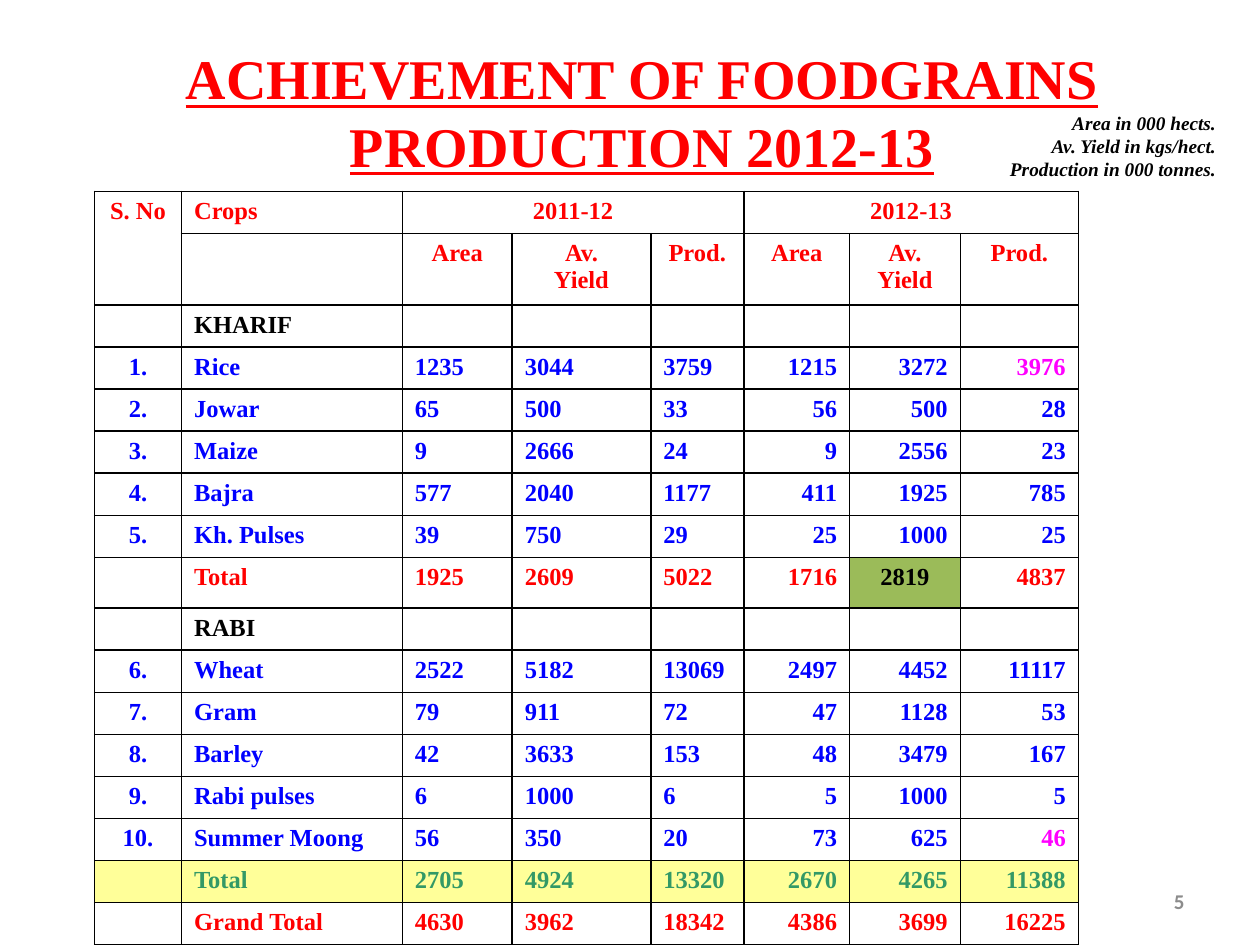
"""Build a slide with a table of foodgrain area, yield and production for two years."""
from lxml.etree import SubElement
from pptx import Presentation
from pptx.dml.color import RGBColor
from pptx.enum.shapes import MSO_SHAPE
from pptx.enum.text import MSO_ANCHOR, PP_ALIGN
from pptx.oxml.ns import qn
from pptx.util import Pt

THEME = {
    "red": "FF0000", "blue": "0000FF", "black": "000000", "magenta": "FF00FF",
    "teal": "339966", "grey": "8C8C8C", "white": "FFFFFF", "yellow": "FFFF99", "green": "9BBB59",
    "title": 32, "body": 14, "number": 12, "note": 11,
    "serif": "Times New Roman", "sans": "Calibri",
}


def write(frame, text, color, size, align, face="serif", **styles):
    """Fill a text frame and format all of its runs."""
    frame.text = text
    formats = {"name": THEME[face], "size": Pt(THEME[size]), "bold": True, **styles}
    for paragraph in frame.paragraphs:
        paragraph.alignment = align
        for run in paragraph.runs:
            run.font.color.rgb = RGBColor.from_string(THEME[color])
            for name, value in formats.items():
                setattr(run.font, name, value)


def draw_borders(cell):
    """Put a thin black line on each side of a cell."""
    properties = cell._tc.get_or_add_tcPr()
    for position, side in enumerate(("a:lnL", "a:lnR", "a:lnT", "a:lnB")):
        line = SubElement(properties, qn(side), w=str(Pt(1)))
        fill = SubElement(line, qn("a:solidFill"))
        SubElement(fill, qn("a:srgbClr"), val=THEME["black"])
        properties.remove(line)
        properties.insert(position, line)


presentation = Presentation()
presentation.slide_width, presentation.slide_height = Pt(720), Pt(540)
slide = presentation.slides.add_slide(presentation.slide_layouts[6])

page_number = slide.shapes.add_textbox(Pt(516), Pt(500.5), Pt(168), Pt(28.75)).text_frame
page_number.word_wrap = True
page_number.vertical_anchor = MSO_ANCHOR.MIDDLE
write(page_number, "5", "grey", "number", PP_ALIGN.RIGHT, "sans")

title = slide.shapes.add_shape(MSO_SHAPE.RECTANGLE, Pt(75.6), Pt(21), Pt(582.5), Pt(85))
title.shadow.inherit = False
title.fill.solid()
title.fill.fore_color.rgb = RGBColor.from_string(THEME["white"])
title.line.fill.background()
title.text_frame.word_wrap = True
title.text_frame.vertical_anchor = MSO_ANCHOR.MIDDLE
write(title.text_frame, "ACHIEVEMENT OF FOODGRAINS PRODUCTION 2012-13", "red", "title",
      PP_ALIGN.CENTER, underline=True)

ROWS = [
    ("red", ["S. No", "Crops", "2011-12", "", "", "2012-13", "", ""]),
    ("red", ["", "", *["Area", "Av.\nYield", "Prod."] * 2]),
    ("black", ["", "KHARIF", *[""] * 6]),
    ("blue", ["1.", "Rice", "1235", "3044", "3759", "1215", "3272", "3976"]),
    ("blue", ["2.", "Jowar", "65", "500", "33", "56", "500", "28"]),
    ("blue", ["3.", "Maize", "9", "2666", "24", "9", "2556", "23"]),
    ("blue", ["4.", "Bajra", "577", "2040", "1177", "411", "1925", "785"]),
    ("blue", ["5.", "Kh. Pulses", "39", "750", "29", "25", "1000", "25"]),
    ("red", ["", "Total", "1925", "2609", "5022", "1716", "2819", "4837"]),
    ("black", ["", "RABI", *[""] * 6]),
    ("blue", ["6.", "Wheat", "2522", "5182", "13069", "2497", "4452", "11117"]),
    ("blue", ["7.", "Gram", "79", "911", "72", "47", "1128", "53"]),
    ("blue", ["8.", "Barley", "42", "3633", "153", "48", "3479", "167"]),
    ("blue", ["9.", "Rabi pulses", "6", "1000", "6", "5", "1000", "5"]),
    ("blue", ["10.", "Summer Moong", "56", "350", "20", "73", "625", "46"]),
    ("teal", ["", "Total", "2705", "4924", "13320", "2670", "4265", "11388"]),
    ("red", ["", "Grand Total", "4630", "3962", "18342", "4386", "3699", "16225"]),
]
COLUMN_WIDTHS = [49.7, 126.2, 62.8, 79.2, 53.2, 60.5, 63.2, 67.5]
ROW_HEIGHTS = {1: 40.5, 8: 29}
RABI_TOTAL_ROW = 15
KHARIF_YIELD = (8, 6)
TEXT_COLORS = {(3, 7): "magenta", (14, 7): "magenta", KHARIF_YIELD: "black"}
COLUMN_ALIGNS = [PP_ALIGN.CENTER] + [PP_ALIGN.LEFT] * 4 + [PP_ALIGN.RIGHT] * 3

table = slide.shapes.add_table(len(ROWS), len(COLUMN_WIDTHS), Pt(54), Pt(109.4),
                               Pt(sum(COLUMN_WIDTHS)), Pt(429.5)).table
table.first_row = table.horz_banding = False
for column, width in zip(table.columns, COLUMN_WIDTHS):
    column.width = Pt(width)

for row, (row_color, texts) in enumerate(ROWS):
    table.rows[row].height = Pt(ROW_HEIGHTS.get(row, 24))
    for column, text in enumerate(texts):
        cell = table.cell(row, column)
        place = (row, column)
        centered = place == KHARIF_YIELD or (row < 2 and column != 1)
        fill = "yellow" if row == RABI_TOTAL_ROW else "green" if place == KHARIF_YIELD else "white"
        cell.fill.solid()
        cell.fill.fore_color.rgb = RGBColor.from_string(THEME[fill])
        draw_borders(cell)
        write(cell.text_frame, text, TEXT_COLORS.get(place, row_color), "body",
              PP_ALIGN.CENTER if centered else COLUMN_ALIGNS[column])
        if not text:
            SubElement(cell.text_frame.paragraphs[0]._p, qn("a:endParaRPr"),
                       sz=str(THEME["body"] * 100))

for first, last in [((0, 0), (1, 0)), ((0, 2), (0, 4)), ((0, 5), (0, 7))]:
    table.cell(*first).merge(table.cell(*last))

units = slide.shapes.add_textbox(Pt(558), Pt(60), Pt(144), Pt(47.5)).text_frame
units.word_wrap = True
write(units, "Area in 000 hects.\vAv. Yield in kgs/hect.\nProduction in 000 tonnes.", "black",
      "note", PP_ALIGN.RIGHT, italic=True)

presentation.save("out.pptx")
